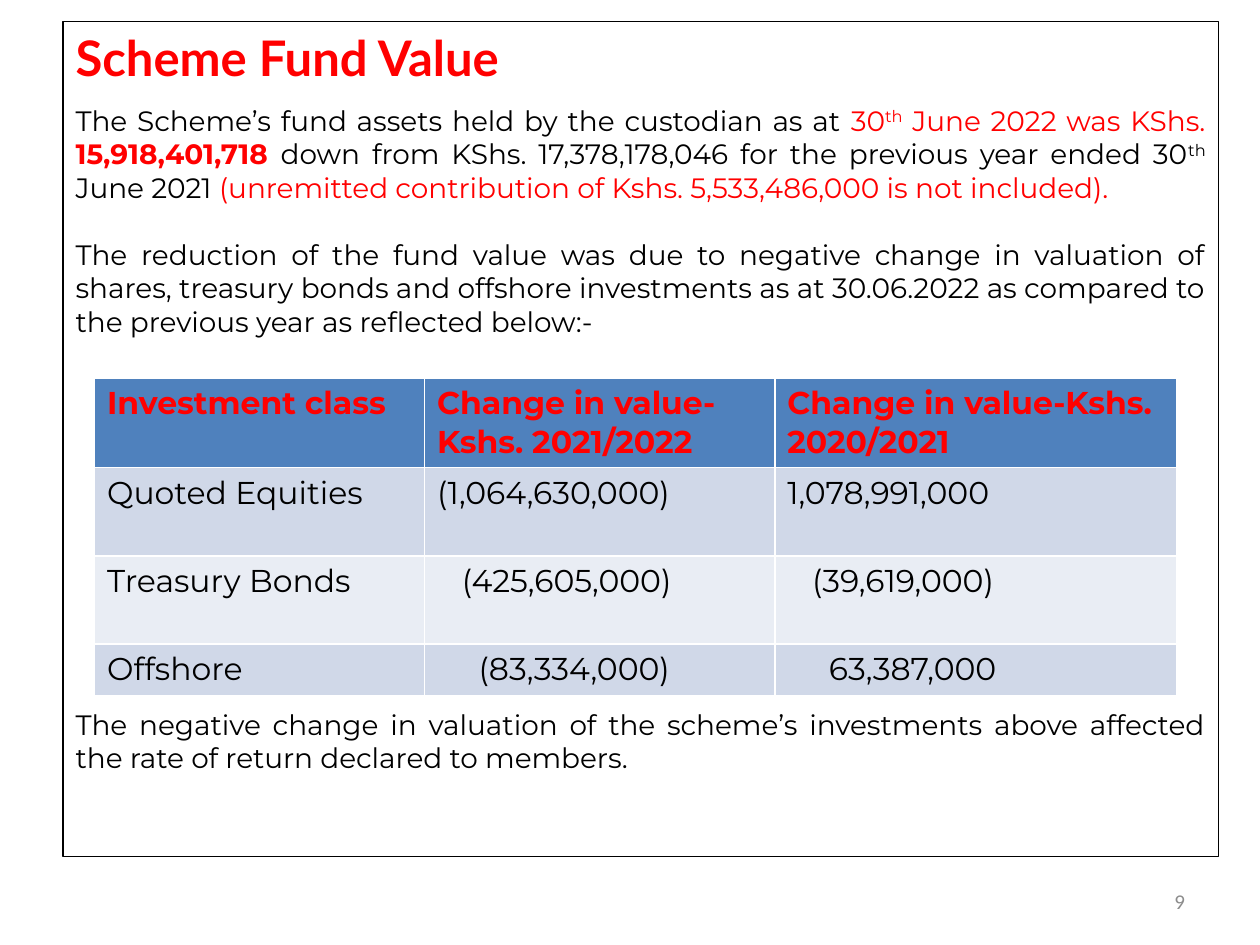
from lxml import etree
from pptx import Presentation, util as u
from pptx.dml.color import RGBColor
from pptx.enum import text as t

RED, BLACK, GREY = "FF0000", "000000", "8C8C8C"
HEAD, BANDS = "4F81BD", ("D0D8E8", "E9EDF4")
DRAW = "{http://schemas.openxmlformats.org/drawingml/2006/main}"


def paint(color, code):
    color.rgb = RGBColor.from_string(code)


class Page:
    """Holds the text style and the slide being filled."""

    base = {"name": "Montserrat", "size": u.Pt(16), "bold": False}

    def __init__(self, slide):
        self.slide = slide

    def place(self, shape, box):
        for key, val in zip(("left", "top", "width", "height"), box):
            setattr(shape, key, u.Cm(val))

    def frame(self, shape, **form):
        form = {"word_wrap": True, "auto_size": t.MSO_AUTO_SIZE.NONE,
                "vertical_anchor": t.MSO_ANCHOR.TOP, **form}
        for key, val in form.items():
            setattr(shape.text_frame, key, val)
        return shape.text_frame

    def run(self, para, words, color=BLACK, raised=False, **form):
        run = para.add_run()
        run.text = words
        for key, val in {**self.base, **form}.items():
            setattr(run.font, key, val)
        paint(run.font.color, color)
        if raised:
            run._r.get_or_add_rPr().set("baseline", "30000")

    def title(self, words, box):
        shape = self.slide.shapes.title
        self.place(shape, box)
        para = self.frame(shape).paragraphs[0]
        para.alignment = t.PP_ALIGN.LEFT
        self.run(para, words, RED, name="Lato", size=u.Pt(28), bold=True)

    def body(self, items, box, inset):
        """Fill the outlined body with (space before, runs) items."""
        shape = self.slide.placeholders[1]
        self.place(shape, box)
        paint(shape.line.color, BLACK)
        shape.line.width = u.Pt(0.75)
        frame = self.frame(shape, margin_top=u.Cm(inset))
        for i, (gap, runs) in enumerate(items):
            para = frame.add_paragraph() if i else frame.paragraphs[0]
            para.alignment = t.PP_ALIGN.JUSTIFY
            para.space_before = u.Pt(gap)
            props = para._p.get_or_add_pPr()
            props.set("marL", "0")
            props.set("indent", "0")
            etree.SubElement(props, DRAW + "buNone")
            for words, form in runs:
                self.run(para, words, **form)

    def table(self, rows, spot, wide, high, shifts):
        """Add a banded table; shifts gives each row's extra indent for values."""
        box = (*spot, sum(wide), sum(high))
        grid = self.slide.shapes.add_table(
            len(rows), len(wide), *map(u.Cm, box)).table
        for col, width in zip(grid.columns, wide):
            col.width = u.Cm(width)
        for r, row in enumerate(rows):
            grid.rows[r].height = u.Cm(high[r])
            for c, words in enumerate(row):
                cell = grid.cell(r, c)
                cell.fill.solid()
                paint(cell.fill.fore_color, BANDS[(r - 1) % 2] if r else HEAD)
                cell.margin_left = u.Cm(0.25 + (shifts[r] if c else 0))
                self.run(cell.text_frame.paragraphs[0], words,
                         BLACK if r else RED, size=u.Pt(18), bold=r == 0)

    def number(self, words, box):
        shape = self.slide.shapes.add_textbox(*map(u.Cm, box))
        frame = self.frame(shape, vertical_anchor=t.MSO_ANCHOR.MIDDLE)
        para = frame.paragraphs[0]
        para.alignment = t.PP_ALIGN.RIGHT
        self.run(para, words, GREY, name="Calibri", size=u.Pt(12))


def main():
    deck = Presentation()
    deck.slide_width, deck.slide_height = u.Cm(25.4), u.Cm(19.05)
    page = Page(deck.slides.add_slide(deck.slide_layouts[1]))
    red, sup = {"color": RED}, {"raised": True}
    page.title("Scheme Fund Value", (1.27, 0.43, 23.29, 1.5))
    page.body([
        (0, [("The Scheme’s fund assets held by the custodian as at ", {}),
             ("30", red), ("th", {**red, **sup}),
             (" June 2022 was KShs. ", red),
             ("15,918,401,718 ", {**red, "bold": True}),
             ("down from KShs. 17,378,178,046 for the previous year ended 30", {}),
             ("th", sup), (" June 2021 ", {}),
             ("(unremitted contribution of Kshs. 5,533,486,000 "
              "is not included).", red)]),
        (19, [("The reduction of the fund value was due to negative change in "
               "valuation of shares, treasury bonds and offshore investments "
               "as at 30.06.2022 as compared to the previous year as "
               "reflected below:-", {})]),
        (211, [("The negative change in valuation of the scheme’s investments "
                "above affected the rate of return declared to members.", {})]),
    ], (1.27, 0.43, 23.29, 16.84), 1.65)
    page.table([
        ("Investment class", "Change in value-Kshs. 2021/2022",
         "Change in value-Kshs. 2020/2021"),
        ("Quoted Equities", "(1,064,630,000)", "1,078,991,000"),
        ("Treasury Bonds", "(425,605,000)", "(39,619,000)"),
        ("Offshore", "(83,334,000)", "63,387,000"),
    ], (1.91, 7.62), (6.65, 7.06, 8.1), (1.78, 1.78, 1.78, 1.04),
        (0, 0, 0.5, 0.84))
    page.number("9", (18.21, 17.65, 5.93, 1.02))
    deck.save("out.pptx")


if __name__ == "__main__":
    main()
